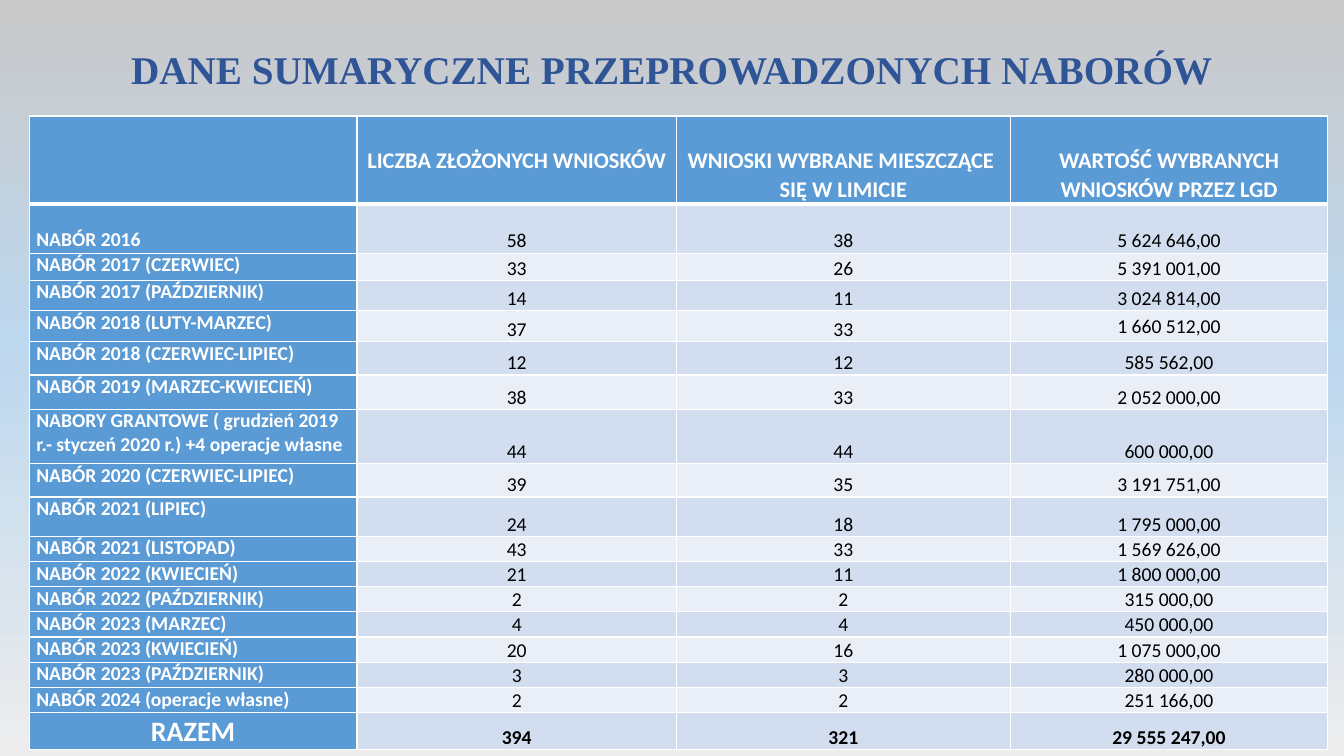
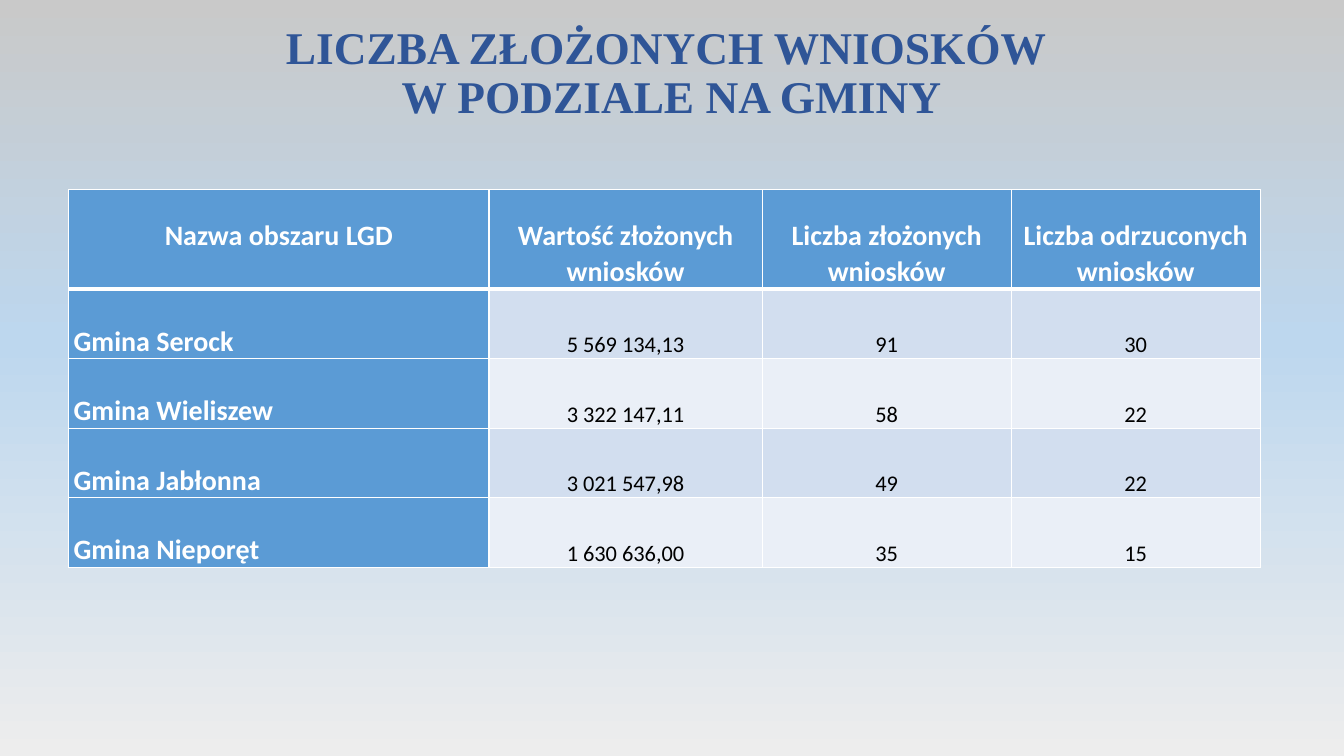
from copy import deepcopy

from pptx import Presentation
from pptx.dml.color import RGBColor
from pptx.enum.text import MSO_ANCHOR, MSO_AUTO_SIZE, PP_ALIGN
from pptx.oxml import parse_xml
from pptx.oxml.ns import nsdecls, qn
from pptx.util import Inches, Pt

# Shared colours and fonts
TITLE_BLUE, HEAD_BLUE = "2F5597", "5B9BD5"
BANDS = ("D2DEEF", "EAEFF7")
WHITE, BLACK = "FFFFFF", "000000"
BACKGROUND = ((0, "EDEDED"), (0.55, "BDD7EE"), (1, "C9C9C9"))
TITLE_FONT, TABLE_FONT = "Times New Roman", "Calibri"


def rgb(value):
    return RGBColor.from_string(value)


def set_attributes(target, values):
    for name, value in values.items():
        setattr(target, name, value)


def insets(left, top, right, bottom):
    sides = ("left", "top", "right", "bottom")
    return {f"margin_{side}": Inches(size)
            for side, size in zip(sides, (left, top, right, bottom))}


def cell_style(margins, anchor, align, size, color, bold, spacing=1.0):
    return {
        "cell": {**insets(*margins), "vertical_anchor": anchor},
        "paragraph": {"alignment": align, "line_spacing": spacing},
        "font": {"name": TABLE_FONT, "size": Pt(size), "bold": bold},
        "color": color,
    }


def vary(style, **changes):
    """Return a style with some of its format values replaced."""
    return {part: {**values, **changes.get(part, {})} if isinstance(values, dict) else values
            for part, values in style.items()}


def set_background(master):
    fill = master.background.fill
    fill.gradient()
    fill.gradient_angle = 90
    stops = master.element.find(".//" + qn("a:gsLst"))
    stops.insert(1, deepcopy(stops[0]))
    for stop, (position, color) in zip(fill.gradient_stops, BACKGROUND):
        stop.color.rgb = rgb(color)
        stop.position = position


def add_titled_slide(prs, title, top, height, size):
    slide = prs.slides.add_slide(prs.slide_layouts[5])
    heading = slide.shapes.title
    set_attributes(heading, {"left": Inches(0.44), "top": Inches(top),
                             "width": Inches(12.44), "height": Inches(height)})
    frame = heading.text_frame
    frame.text = title
    set_attributes(frame, {"word_wrap": True, "auto_size": MSO_AUTO_SIZE.NONE,
                           "vertical_anchor": MSO_ANCHOR.MIDDLE})
    paragraph = frame.paragraphs[0]
    set_attributes(paragraph, {"alignment": PP_ALIGN.CENTER, "line_spacing": 0.9})
    set_attributes(paragraph.font, {"name": TITLE_FONT, "size": Pt(size), "bold": True})
    paragraph.font.color.rgb = rgb(TITLE_BLUE)
    return slide


def set_borders(cell, top, bottom):
    properties = cell._tc.get_or_add_tcPr()
    for side, width in (("L", 1), ("R", 1), ("T", top), ("B", bottom)):
        properties.append(parse_xml(
            f'<a:ln{side} {nsdecls("a")} w="{Pt(width)}"><a:solidFill>'
            f'<a:srgbClr val="{WHITE}"/></a:solidFill></a:ln{side}>'))


def fill_cell(cell, text, style, color):
    cell.fill.solid()
    cell.fill.fore_color.rgb = rgb(color)
    set_attributes(cell, style["cell"])
    paragraph = cell.text_frame.paragraphs[0]
    if text:
        paragraph.text = text
    set_attributes(paragraph, style["paragraph"])
    set_attributes(paragraph.font, style["font"])
    paragraph.font.color.rgb = rgb(style["color"])


def add_summary_table(slide, left, top, widths, heights, rows, styles, exceptions):
    """Header row, label column and banded values; exceptions go by (row, column)."""
    table = slide.shapes.add_table(
        len(rows), len(widths), Inches(left), Inches(top),
        Inches(sum(widths)), Inches(sum(heights))).table
    for column, width in zip(table.columns, widths):
        column.width = Inches(width)
    for r, (texts, height) in enumerate(zip(rows, heights)):
        table.rows[r].height = Inches(height)
        for c, text in enumerate(texts):
            role = "header" if r == 0 else "label" if c == 0 else "value"
            color = BANDS[(r - 1) % 2] if role == "value" else HEAD_BLUE
            cell = table.cell(r, c)
            set_borders(cell, 3 if r == 1 else 1, 3 if r == 0 else 1)
            fill_cell(cell, text, exceptions.get((r, c), styles[role]), color)


CALL_ROWS = [
    ("", "LICZBA ZŁOŻONYCH WNIOSKÓW", "WNIOSKI WYBRANE MIESZCZĄCE \vSIĘ W LIMICIE",
     "WARTOŚĆ WYBRANYCH WNIOSKÓW PRZEZ LGD"),
    ("NABÓR 2016", "58", "38", "5 624 646,00"),
    ("NABÓR 2017 (CZERWIEC)", "33", "26", "5 391 001,00"),
    ("NABÓR 2017 (PAŹDZIERNIK)", "14", "11", "3 024 814,00"),
    ("NABÓR 2018 (LUTY-MARZEC)", "37", "33", "1 660 512,00"),
    ("NABÓR 2018 (CZERWIEC-LIPIEC)", "12", "12", "585 562,00"),
    ("NABÓR 2019 (MARZEC-KWIECIEŃ)", "38", "33", "2 052 000,00"),
    ("NABORY GRANTOWE ( grudzień 2019 r.- styczeń 2020 r.) +4 operacje własne",
     "44", "44", "600 000,00"),
    ("NABÓR 2020 (CZERWIEC-LIPIEC)", "39", "35", "3 191 751,00"),
    ("NABÓR 2021 (LIPIEC)", "24", "18", "1 795 000,00"),
    ("NABÓR 2021 (LISTOPAD)", "43", "33", "1 569 626,00"),
    ("NABÓR 2022 (KWIECIEŃ)", "21", "11", "1 800 000,00"),
    ("NABÓR 2022 (PAŹDZIERNIK)", "2", "2", "315 000,00"),
    ("NABÓR 2023 (MARZEC)", "4", "4", "450 000,00"),
    ("NABÓR 2023 (KWIECIEŃ)", "20", "16", "1 075 000,00"),
    ("NABÓR 2023 (PAŹDZIERNIK)", "3", "3", "280 000,00"),
    ("NABÓR 2024 (operacje własne)", "2", "2", "251 166,00"),
    ("RAZEM", "394", "321", "29 555 247,00"),
]

COMMUNE_ROWS = [
    ("Nazwa obszaru LGD", "Wartość złożonych wniosków", "Liczba złożonych wniosków",
     "Liczba odrzuconych wniosków"),
    ("Gmina Serock", "5 569 134,13", "91", "30"),
    ("Gmina Wieliszew", "3 322 147,11", "58", "22"),
    ("Gmina Jabłonna", "3 021 547,98", "49", "22"),
    ("Gmina Nieporęt", "1 630 636,00", "35", "15"),
]


def build_calls_slide(prs):
    slide = add_titled_slide(prs, "DANE SUMARYCZNE PRZEPROWADZONYCH NABORÓW", 0.36, 0.71, 28)
    styles = {
        "header": cell_style((0.07, 0.29, 0.07, 0), MSO_ANCHOR.TOP, PP_ALIGN.CENTER,
                             16, WHITE, True, 1.07),
        "label": cell_style((0.07, 0, 0.07, 0), MSO_ANCHOR.TOP, PP_ALIGN.LEFT,
                            14, WHITE, True),
        "value": cell_style((0.01, 0.01, 0.01, 0), MSO_ANCHOR.BOTTOM, PP_ALIGN.CENTER,
                            14, BLACK, False),
    }
    # First call sits low in its row; the last row holds the totals
    total = len(CALL_ROWS) - 1
    exceptions = {
        (1, 0): vary(styles["label"], cell={"margin_top": Inches(0.24)}),
        (4, 3): vary(styles["value"], cell={"vertical_anchor": MSO_ANCHOR.MIDDLE}),
        (total, 0): vary(styles["label"], font={"size": Pt(20)},
                         paragraph={"alignment": PP_ALIGN.CENTER, "line_spacing": 1.07}),
    }
    for column in (1, 2, 3):
        exceptions[total, column] = vary(styles["value"], font={"bold": True})
    heights = [0.85, 0.49, 0.27, 0.3, 0.31, 0.33, 0.34, 0.54, 0.33, 0.39] + [0.25] * 7 + [0.36]
    add_summary_table(slide, 0.29, 1.15, (3.25, 3.17, 3.31, 3.15), heights,
                      CALL_ROWS, styles, exceptions)


def build_communes_slide(prs):
    slide = add_titled_slide(prs, "LICZBA ZŁOŻONYCH WNIOSKÓW \vW PODZIALE NA GMINY",
                             0.25, 0.98, 32.4)
    margins = (0.05, 0, 0.05, 0)
    header = cell_style(margins, MSO_ANCHOR.BOTTOM, PP_ALIGN.CENTER, 20, WHITE, True, 1.07)
    styles = {
        "header": header,
        "label": vary(header, paragraph={"alignment": PP_ALIGN.LEFT}),
        "value": cell_style(margins, MSO_ANCHOR.BOTTOM, PP_ALIGN.CENTER, 16, BLACK, False),
    }
    # The first heading lines up with the upper line of the others
    exceptions = {(0, 0): vary(header, cell={"margin_bottom": Inches(0.36)})}
    add_summary_table(slide, 0.68, 1.88, (4.17, 2.71, 2.47, 2.47), [0.99] + [0.69] * 4,
                      COMMUNE_ROWS, styles, exceptions)


def main():
    prs = Presentation()
    set_attributes(prs, {"slide_width": Inches(13.33), "slide_height": Inches(7.5)})
    set_background(prs.slide_master)
    build_calls_slide(prs)
    build_communes_slide(prs)
    prs.save("out.pptx")


if __name__ == "__main__":
    main()
